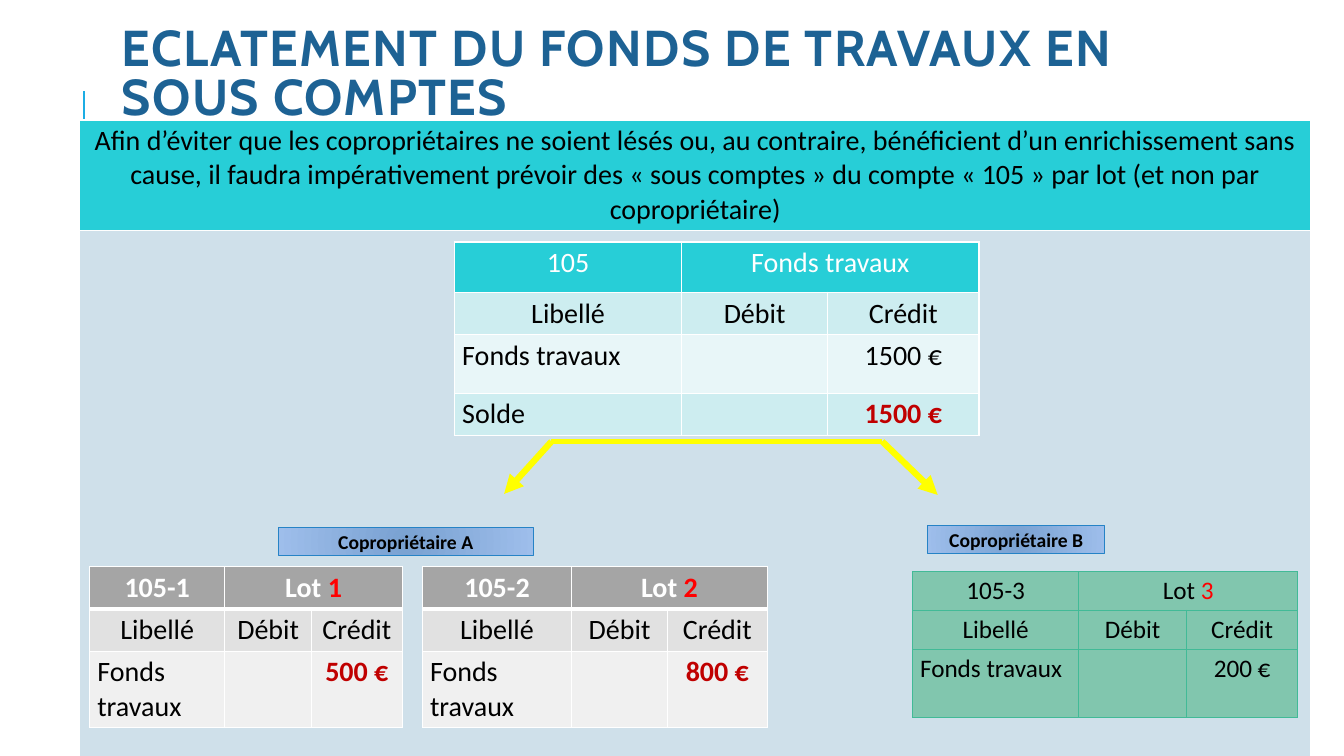
from pptx import Presentation
from pptx.dml.color import RGBColor
from pptx.enum.shapes import MSO_CONNECTOR as Conn, MSO_SHAPE as Shape
from pptx.enum.text import MSO_ANCHOR as Anchor, MSO_AUTO_SIZE as Auto, PP_ALIGN as Align
from pptx.oxml import parse_xml
from pptx.oxml.ns import nsdecls, qn
from pptx.util import Inches, Pt

# Content: a cell is a text or a list of (text, kind) runs
TITLE = [("ECLATEMENT DU FONDS DE TRAVAUX EN ", False), ("SOUS COMPTES", True)]
INTRO = ("Afin d’éviter que les copropriétaires ne soient lésés ou, au contraire, "
         "bénéficient d’un enrichissement sans cause, il faudra impérativement prévoir des "
         "« sous comptes » du compte « 105 » par lot (et non par copropriétaire)")
HEADS = ["Libellé", "Débit", "Crédit"]


def lot(num, total):
    return [[f"105-{num}", [("Lot ", "head"), (str(num), "lot")], ""],
            HEADS, ["Fonds travaux", "", total]]


FUND = [["105", "Fonds travaux", ""], HEADS, ["Fonds travaux", "", "1500 €"],
        ["Solde", "", [("1500 €", "sum")]]]

# Left, top, column widths, row heights, style, cells
TABLES = [
    (0.79, 1.19, [12.21], [1.1, 5.31], "panel", [[INTRO], [""]]),
    (0.89, 5.62, [1.34, 0.86, 0.9], [0.41, 0.41, 0.74], "grey", lot(1, [("500 €", "sum")])),
    (4.19, 5.62, [1.48, 0.95, 0.99], [0.41, 0.41, 0.74], "grey", lot(2, [("800 €", "sum")])),
    (9.05, 5.67, [1.65, 1.07, 1.1], [0.38, 0.38, 0.68], "green", lot(3, "200 €")),
    (4.51, 2.4, [2.25, 1.45, 1.5], [0.5, 0.41, 0.58, 0.41], "teal", FUND),
]
OWNERS = [("Copropriétaire A", 2.76, 5.23, 2.53), ("Copropriétaire B", 9.2, 5.21, 1.76)]
LEFT, RIGHT = (5.47, 4.38), (8.75, 4.38)
# Start, end, width, arrowhead
ARROWS = [(LEFT, RIGHT, 3, False), (RIGHT, (9.3, 4.91), 4.5, True), (LEFT, (5, 4.9), 4.5, True)]

# Colours and type sizes
THEME = {
    "title": "1D6294", "rule": "1CADE4", "arrow": "FFFF00", "text": "000000",
    "lot": "FF0000", "sum": "C00000", "inner": "79A1D1", "outer": "9EBEEB", "frame": "2683C6",
    "title_font": "Cabin", "font": "Calibri", "title_size": 36, "owner_size": 14,
    # Row fills, heading colour, heading bold, size, border, border width, rule under heading
    "panel": (["27CED7", "CFE0EA"], "000000", False, 20, "FFFFFF", 1, 1),
    "grey": (["A5A5A5", "E1E1E1", "F0F0F0"], "FFFFFF", True, 20, "FFFFFF", 1, 3),
    "green": (["81C6AE"] * 3, "000000", False, 18, "42BA97", 0.75, 0.75),
    "teal": (["27CED7", "CDEDF0", "E8F6F8", "CDEDF0"], "FFFFFF", False, 20, "FFFFFF", 1, 1),
}


def rgb(code):
    return RGBColor.from_string(code)


def add_run(para, text, size, color, bold=False, face=THEME["font"]):
    run = para.add_run()
    run.text = text
    font = run.font
    font.name, font.size, font.bold = face, Pt(size), bold
    font.color.rgb = rgb(color)
    return run


def add_line(slide, start, end, color, width, head=False):
    line = slide.shapes.add_connector(Conn.STRAIGHT, *[Inches(n) for n in start + end])
    line.line.color.rgb = rgb(color)
    line.line.width = Pt(width)
    if head:
        line.line._ln.append(parse_xml(f'<a:tailEnd {nsdecls("a")} type="triangle"/>'))
    line._element.spPr.append(parse_xml(f'<a:effectLst {nsdecls("a")}/>'))


def set_edges(cell, color, sides):
    props = cell._tc.get_or_add_tcPr()
    for spot, (side, width) in enumerate(sides.items()):
        props.insert(spot, parse_xml(
            f'<a:ln{side} {nsdecls("a")} w="{Pt(width)}"><a:solidFill>'
            f'<a:srgbClr val="{color}"/></a:solidFill></a:ln{side}>'))


def fill_cell(cell, item, row, col, style):
    fills, head, bold, size, edge, width, rule = style
    cell.fill.solid()
    cell.fill.fore_color.rgb = rgb(fills[row])
    cell.margin_left = cell.margin_right = Inches(0.075)
    cell.margin_top = cell.margin_bottom = Inches(0.04)
    set_edges(cell, edge, {"L": width, "R": width, "T": rule if row == 1 else width,
                           "B": rule if row == 0 else width})
    if not item:
        return
    para = cell.text_frame.paragraphs[0]
    para.alignment = Align.LEFT if row > 1 and col == 0 else Align.CENTER
    base = head if row == 0 else THEME["text"]
    for text, kind in [(item, "plain")] if isinstance(item, str) else item:
        color = THEME.get(kind, base)
        add_run(para, text, size, color, kind == "sum" or (bold and row == 0))


def add_grid(slide, left, top, cols, rows, name, data):
    table = slide.shapes.add_table(len(rows), len(cols), Inches(left), Inches(top),
                                   Inches(sum(cols)), Inches(sum(rows))).table
    table.first_row = table.horz_banding = False
    for col, width in enumerate(cols):
        table.columns[col].width = Inches(width)
    for row, height in enumerate(rows):
        table.rows[row].height = Inches(height)
        for col, item in enumerate(data[row]):
            fill_cell(table.cell(row, col), item, row, col, THEME[name])
    if len(cols) == 3:
        table.cell(0, 1).merge(table.cell(0, 2))


def add_owner(slide, name, left, top, width):
    box = slide.shapes.add_shape(Shape.RECTANGLE, Inches(left), Inches(top),
                                 Inches(width), Inches(0.28))
    box.shadow.inherit = False
    box.fill.gradient()
    for stop, key in zip(box.fill.gradient_stops, ("inner", "outer")):
        stop.color.rgb = rgb(THEME[key])
    # Turn the linear gradient into a round one
    grad = box._element.spPr.find(qn("a:gradFill"))
    grad.remove(grad.find(qn("a:lin")))
    grad.append(parse_xml(f'<a:path {nsdecls("a")} path="circle"><a:fillToRect '
                          'l="50000" t="50000" r="50000" b="50000"/></a:path>'))
    box.line.color.rgb = rgb(THEME["frame"])
    box.line.width = Pt(0.75)
    frame = box.text_frame
    frame.vertical_anchor = Anchor.MIDDLE
    para = frame.paragraphs[0]
    para.alignment = Align.CENTER
    add_run(para, name, THEME["owner_size"], THEME["text"], True)


def add_title(slide):
    title = slide.shapes.title
    title.left, title.top, title.width, title.height = map(Inches, (1.11, 0.34, 11.13, 0.84))
    frame = title.text_frame
    frame.auto_size, frame.word_wrap = Auto.NONE, True
    frame.vertical_anchor = Anchor.MIDDLE
    para = frame.paragraphs[0]
    para.alignment, para.line_spacing = Align.LEFT, 0.8
    for text, under in TITLE:
        run = add_run(para, text, THEME["title_size"], THEME["title"], True, THEME["title_font"])
        run.font.underline = under
        run.font._element.set("spc", "100")


def main():
    deck = Presentation()
    deck.slide_width, deck.slide_height = Inches(13.33), Inches(7.5)
    slide = deck.slides.add_slide(deck.slide_layouts[5])
    # Title and its side rule
    add_line(slide, (0.83, 1.9), (0.83, 0.9), THEME["rule"], 1.5)
    add_title(slide)
    # Panel and accounts
    for spec_row in TABLES:
        add_grid(slide, *spec_row)
    # Owners and the split of the fund
    for owner in OWNERS:
        add_owner(slide, *owner)
    for start, end, width, head in ARROWS:
        add_line(slide, start, end, THEME["arrow"], width, head)
    deck.save("out.pptx")


if __name__ == "__main__":
    main()
